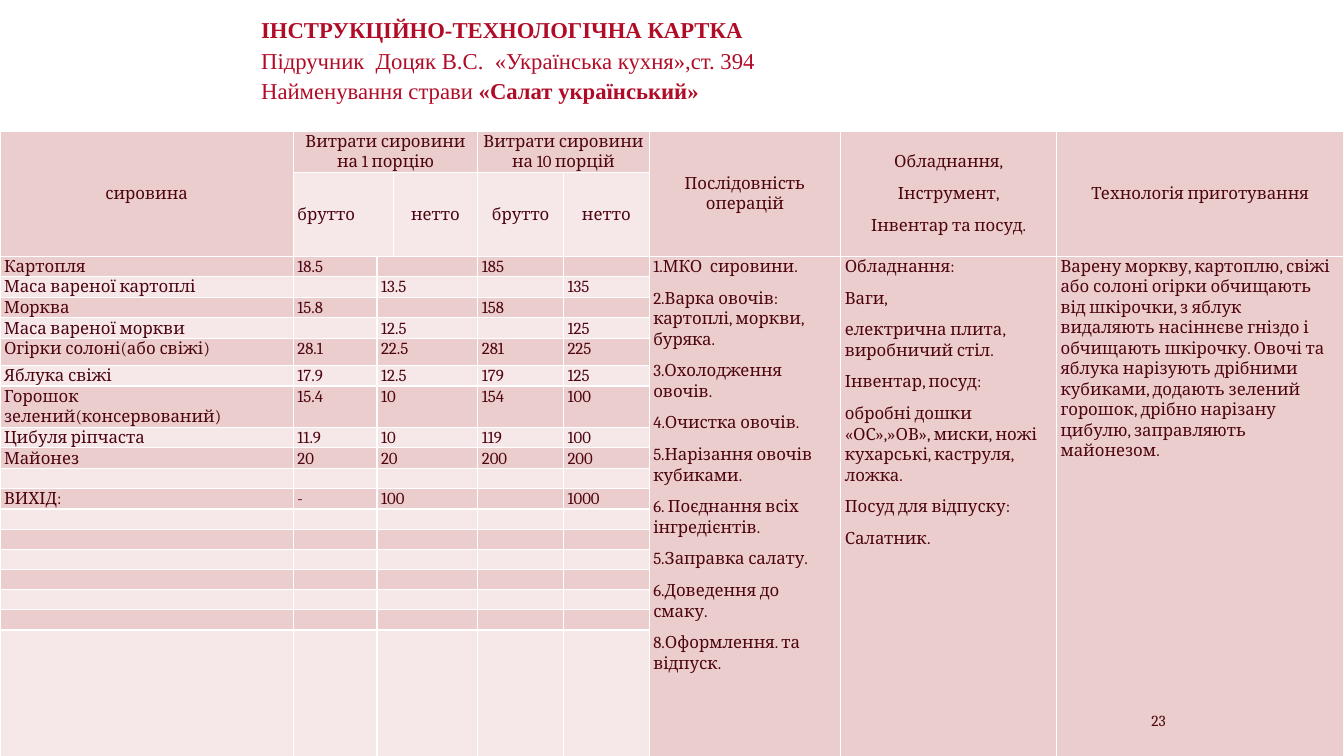
import pptx
import pptx.dml.color
import pptx.enum.text
import pptx.util
from lxml import etree
from pptx.util import Inches

DRAWING = "{http://schemas.openxmlformats.org/drawingml/2006/main}"
ANCHOR = pptx.enum.text.MSO_ANCHOR
ALIGN = pptx.enum.text.PP_ALIGN
CRIMSON, MAROON, ROSE, PALE = "B10C27", "4D0511", "ECCDCD", "F6E8E8"


def add_run(paragraph, text, size, font, color, bold=False):
    run = paragraph.add_run()
    run.text = text
    run.font.size = pptx.util.Pt(size)
    run.font.name = font
    run.font.bold = bold
    run.font.color.rgb = pptx.dml.color.RGBColor.from_string(color)


def fill_cell(cell, lines, color, align=ALIGN.LEFT, anchor=ANCHOR.TOP):
    cell.margin_left = cell.margin_right = Inches(0.04)
    cell.margin_top = cell.margin_bottom = 0
    cell.vertical_anchor = anchor
    properties = cell._tc.get_or_add_tcPr()
    for side in ("lnL", "lnR", "lnT", "lnB"):
        border = etree.SubElement(properties, DRAWING + side, w="12700")
        border_fill = etree.SubElement(border, DRAWING + "solidFill")
        etree.SubElement(border_fill, DRAWING + "srgbClr", val="FFFFFF")
    cell.fill.solid()
    cell.fill.fore_color.rgb = pptx.dml.color.RGBColor.from_string(color)
    for index, line in enumerate(lines or [""]):
        frame = cell.text_frame
        paragraph = frame.add_paragraph() if index else frame.paragraphs[0]
        paragraph.alignment = align
        paragraph.line_spacing = 1.06
        paragraph.space_after = pptx.util.Pt(8)
        if line:
            add_run(paragraph, line, 12, "Cambria", MAROON)
        else:
            ending = etree.SubElement(paragraph._p, DRAWING + "endParaRPr", sz="1200")
            etree.SubElement(ending, DRAWING + "latin", typeface="Cambria")


presentation = pptx.Presentation()
presentation.slide_width = Inches(13.33)
presentation.slide_height = Inches(7.5)
slide = presentation.slides.add_slide(presentation.slide_layouts[5])

title = slide.shapes.title
title.left, title.top = Inches(2.49), Inches(0.98)
title.width, title.height = Inches(9.72), Inches(0.64)
title_frame = title.text_frame
title_frame.auto_size = pptx.enum.text.MSO_AUTO_SIZE.NONE
title_frame.word_wrap = True
title_frame.vertical_anchor = ANCHOR.BOTTOM
title_frame.margin_top = 0
title_frame.margin_bottom = Inches(0.59)
heading = title_frame.paragraphs[0]
heading.alignment = ALIGN.LEFT
heading.line_spacing = 1.11
title_lines = [
    [("ІНСТРУКЦІЙНО-ТЕХНОЛОГІЧНА КАРТКА", True)],
    [("Підручник  Доцяк В.С.  «Українська кухня»,ст. 394", False)],
    [("Найменування страви", False), (" «Салат український»", True)],
]
for index, pieces in enumerate(title_lines):
    if index:
        heading.add_line_break()
    for text, bold in pieces:
        add_run(heading, text, 16.2, "Times New Roman", CRIMSON, bold)

column_widths = [2.91, 0.83, 0.16, 0.84, 0.85, 0.85, 1.9, 2.14, 2.85]
row_heights = [0.41, 0.83] + [0.2] * 4 + [0.27, 0.2, 0.41] + [0.2] * 10 + [2.34]
table = slide.shapes.add_table(
    len(row_heights), len(column_widths), 0, Inches(1.3), Inches(13.33), Inches(7.26)
).table
table.first_row = table.horz_banding = False
for column, width in zip(table.columns, column_widths):
    column.width = Inches(width)
for row, height in zip(table.rows, row_heights):
    row.height = Inches(height)

headers = {
    (0, 0): ["сировина"],
    (0, 1): ["Витрати сировини на 1 порцію"],
    (0, 4): ["Витрати сировини на 10 порцій"],
    (0, 6): ["Послідовність операцій"],
    (0, 7): ["Обладнання,", "Інструмент,", "Інвентар та посуд."],
    (0, 8): ["Технологія приготування"],
    (1, 1): ["брутто"],
    (1, 3): ["нетто"],
    (1, 4): ["брутто"],
    (1, 5): ["нетто"],
}
ingredients = [
    ("Картопля", "18.5", "", "185", ""),
    ("Маса вареної картоплі", "", "13.5", "", "135"),
    ("Морква", "15.8", "", "158", ""),
    ("Маса вареної моркви", "", "12.5", "", "125"),
    ("Огірки солоні(або свіжі)", "28.1", "22.5", "281", "225"),
    ("Яблука свіжі", "17.9", "12.5", "179", "125"),
    ("Горошок зелений(консервований)", "15.4", "10", "154", "100"),
    ("Цибуля ріпчаста", "11.9", "10", "119", "100"),
    ("Майонез", "20", "20", "200", "200"),
    ("", "", "", "", ""),
    ("ВИХІД:", "-", "100", "", "1000"),
]
operations = [
    "1.МКО  сировини.",
    "2.Варка овочів: картоплі, моркви, буряка.",
    "3.Охолодження овочів.",
    "4.Очистка овочів.",
    "5.Нарізання овочів кубиками.",
    "6. Поєднання всіх інгредієнтів.",
    "5.Заправка салату.",
    "6.Доведення до смаку.",
    "8.Оформлення. та відпуск.",
]
equipment = [
    "Обладнання:",
    "Ваги,",
    "електрична плита, виробничий стіл.",
    "Інвентар, посуд:",
    "обробні дошки «ОС»,»ОВ», миски, ножі кухарські, каструля, ложка.",
    "Посуд для відпуску:",
    "Салатник.",
]
technology = [
    "Варену моркву, картоплю, свіжі або солоні огірки обчищають від шкірочки, "
    "з яблук видаляють насіннєве гніздо і обчищають шкірочку. Овочі та яблука "
    "нарізують дрібними кубиками, додають зелений горошок, дрібно нарізану "
    "цибулю, заправляють майонезом."
]

cell_texts = dict(headers)
for row, values in enumerate(ingredients, 2):
    for column, value in zip((0, 1, 2, 4, 5), values):
        cell_texts[row, column] = [value]
for column, lines in enumerate((operations, equipment, technology), 6):
    cell_texts[2, column] = lines

last_row = len(row_heights) - 1
merges = [(0, 0, 1, 0), (0, 1, 0, 3), (0, 4, 0, 5), (1, 1, 1, 2)]
merges += [(0, column, 1, column) for column in (6, 7, 8)]
merges += [(2, column, last_row, column) for column in (6, 7, 8)]
merges += [(row, 2, row, 3) for row in range(2, last_row + 1)]
for top, left, bottom, right in merges:
    table.cell(top, left).merge(table.cell(bottom, right))

for row in range(len(row_heights)):
    for column in range(len(column_widths)):
        is_header = row < 2
        centered = is_header and (row, column) != (1, 1)
        fill_cell(
            table.cell(row, column),
            cell_texts.get((row, column)),
            PALE if row % 2 and column < 6 else ROSE,
            ALIGN.CENTER if centered else ALIGN.LEFT,
            ANCHOR.MIDDLE if is_header else ANCHOR.TOP,
        )

page_number = slide.shapes.add_textbox(Inches(10.66), Inches(7), Inches(1), Inches(0.3))
page_number.text_frame.word_wrap = True
page_number.text_frame.vertical_anchor = ANCHOR.MIDDLE
number_paragraph = page_number.text_frame.paragraphs[0]
number_paragraph.alignment = ALIGN.RIGHT
add_run(number_paragraph, "23", 11, "Cambria", MAROON)

presentation.save("out.pptx")
